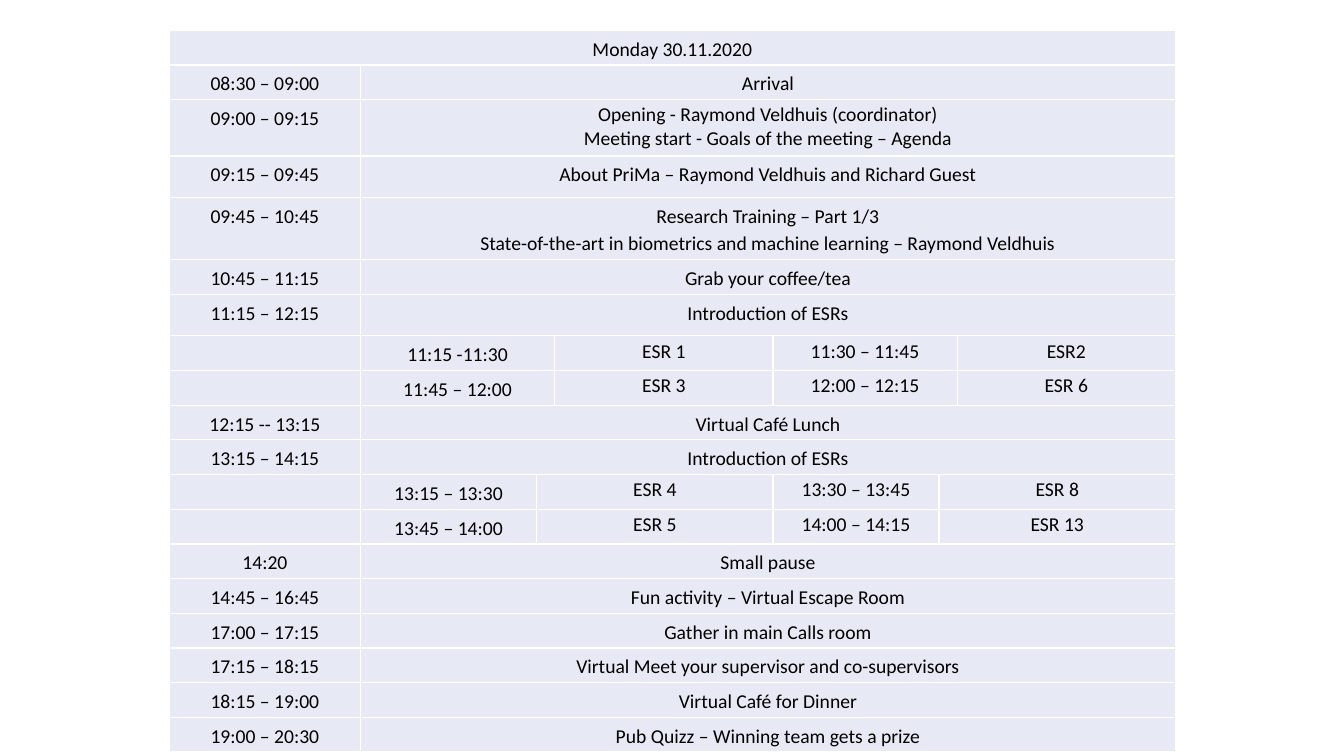
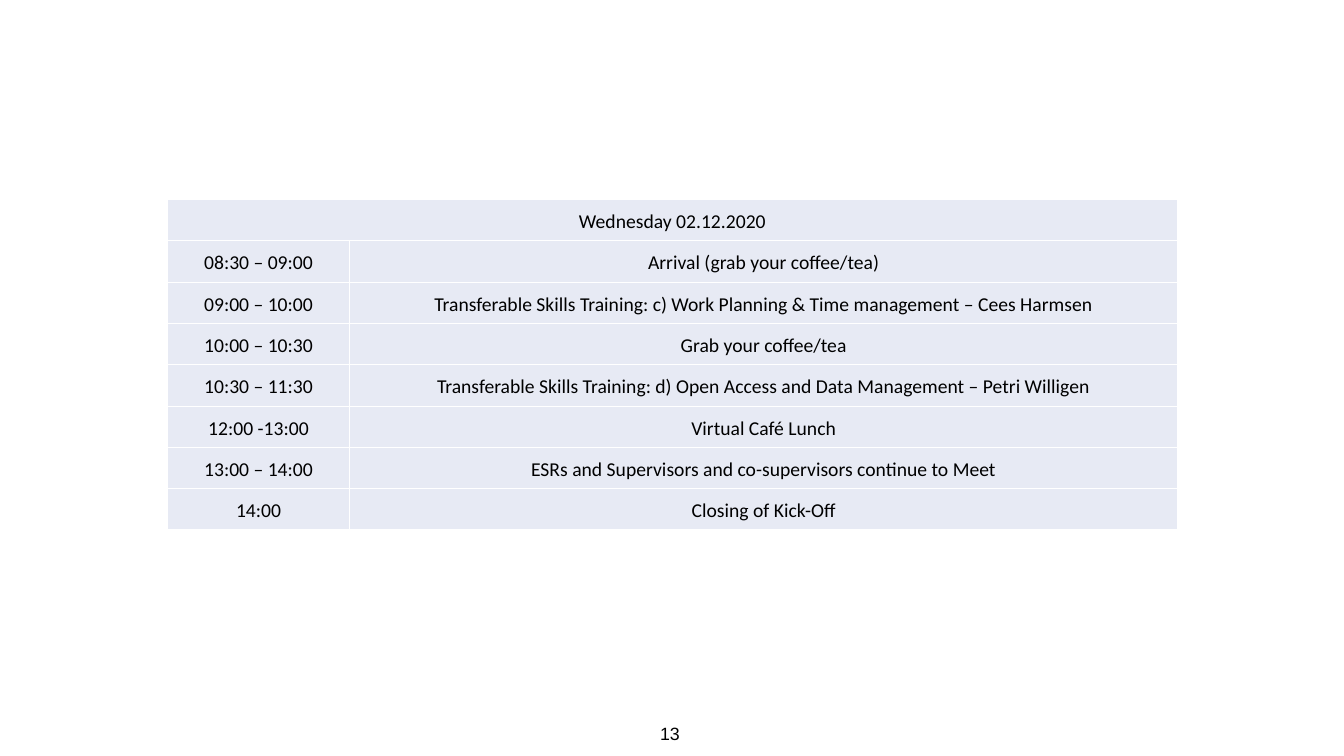
from typing import NamedTuple

from lxml.etree import SubElement
from pptx import Presentation
from pptx.dml.color import RGBColor
from pptx.enum.text import PP_ALIGN
from pptx.oxml.ns import qn
from pptx.util import Inches, Pt

COLORS = {"cell": "E7EAF4", "rule": "FFFFFF", "text": "000000"}
WIDE, HIGH = 13.33, 7.5
EARLY = (0, 1, 3, 4, 6)
LATE = (0, 1, 2, 4, 5)


class Row(NamedTuple):
    """One table row: its texts, height, starting columns and line spacing."""
    texts: tuple
    high: float
    starts: tuple = (0, 1)
    lead: float = 1.15


def style(para, size, face):
    """Centre a paragraph and set its font."""
    para.alignment = PP_ALIGN.CENTER
    para.font.size = Pt(size)
    para.font.name = face
    para.font.color.rgb = RGBColor.from_string(COLORS["text"])


def border(cell):
    """Rule all four sides of a cell."""
    props = cell._tc.get_or_add_tcPr()
    for place, side in enumerate(("lnL", "lnR", "lnT", "lnB")):
        line = SubElement(props, qn(f"a:{side}"), w=str(Pt(1)))
        fill = SubElement(line, qn("a:solidFill"))
        SubElement(fill, qn("a:srgbClr"), val=COLORS["rule"])
        props.insert(place, line)


def fill_cell(cell, text, inset, lead, flush):
    """Write centred text in a cell, flush with its top if asked."""
    cell.margin_left = cell.margin_right = Pt(inset)
    cell.margin_top = cell.margin_bottom = 0 if flush else Pt(inset)
    lines = text.split("\n")
    cell.text = text
    for para in cell.text_frame.paragraphs:
        para.line_spacing = lead if len(lines) > 1 else 1.15
        para.space_after = Pt(0 if len(lines) > 1 else 10)
        style(para, 14, "Calibri")


def agenda(slide, box, cols, rows, inset):
    """Place a day's timetable in a box, with columns as shares of its width."""
    left, top, width = box
    high = sum(row.high for row in rows)
    frame = slide.shapes.add_table(
        len(rows), len(cols), Inches(left), Inches(top), Inches(width), Inches(high))
    table = frame.table
    table.first_row = table.horz_banding = False
    for col, share in zip(table.columns, cols):
        col.width = Inches(width * share / sum(cols))
    for i, row in enumerate(rows):
        table.rows[i].height = Inches(row.high)
        for j in range(len(cols)):
            cell = table.cell(i, j)
            cell.fill.solid()
            cell.fill.fore_color.rgb = RGBColor.from_string(COLORS["cell"])
            border(cell)
        ends = row.starts[1:] + (len(cols),)
        for k, (start, end, text) in enumerate(zip(row.starts, ends, row.texts)):
            cell = table.cell(i, start)
            if end - start > 1:
                cell.merge(table.cell(i, end - 1))
            fill_cell(cell, text, inset, row.lead, k > 1)


def footer(slide, number):
    """Place the slide number at the foot, centred."""
    width = 0.35
    box = slide.shapes.add_textbox(
        Inches((WIDE - width) / 2 - 0.02), Inches(7.11), Inches(width), Inches(0.33))
    frame = box.text_frame
    frame.word_wrap = False
    frame.margin_left = frame.margin_right = Inches(0.06)
    frame.margin_top = frame.margin_bottom = Inches(0.06)
    frame.text = number
    style(frame.paragraphs[0], 12.7, "Arial")


def monday(slide):
    """Build the first day."""
    low, mid = 0.34, 0.41
    rows = [
        Row(("Monday 30.11.2020",), low, (0,)),
        Row(("08:30 – 09:00", "Arrival"), low),
        Row(("09:00 – 09:15", "Opening - Raymond Veldhuis (coordinator)\n"
             "Meeting start - Goals of the meeting – Agenda"), 0.56, lead=1.0),
        Row(("09:15 – 09:45", "About PriMa – Raymond Veldhuis and Richard Guest"), mid),
        Row(("09:45 – 10:45", "Research Training – Part 1/3\nState-of-the-art in "
             "biometrics and machine learning – Raymond Veldhuis"), 0.62),
        Row(("10:45 – 11:15", "Grab your coffee/tea"), low),
        Row(("11:15 – 12:15", "Introduction of ESRs"), mid),
        Row(("", "11:15 -11:30", "ESR 1", "11:30 – 11:45", "ESR2"), low, EARLY),
        Row(("", "11:45 – 12:00", "ESR 3", "12:00 – 12:15", "ESR 6"), low, EARLY),
        Row(("12:15 -- 13:15", "Virtual Café Lunch"), low),
        Row(("13:15 – 14:15", "Introduction of ESRs"), low),
        Row(("", "13:15 – 13:30", "ESR 4", "13:30 – 13:45", "ESR 8"), low, LATE),
        Row(("", "13:45 – 14:00", "ESR 5", "14:00 – 14:15", "ESR 13"), low, LATE),
        Row(("14:20", "Small pause"), low),
        Row(("14:45 – 16:45", "Fun activity – Virtual Escape Room"), low),
        Row(("17:00 – 17:15", "Gather in main Calls room"), low),
        Row(("17:15 – 18:15", "Virtual Meet your supervisor and co-supervisors"), low),
        Row(("18:15 – 19:00", "Virtual Café for Dinner"), low),
        Row(("19:00 – 20:30", "Pub Quizz – Winning team gets a prize"), low),
    ]
    cols = (1.9, 1.75, 0.18, 2.17, 1.65, 0.18, 2.17)
    agenda(slide, (1.68, 0.3, 9.98), cols, rows, 2.6)


def closing(slide):
    """Build the last day."""
    high = 0.41
    plan = [
        ("08:30 – 09:00", "Arrival (grab your coffee/tea)"),
        ("09:00 – 10:00", "Transferable Skills Training: c) Work Planning & "
         "Time management – Cees Harmsen"),
        ("10:00 – 10:30", "Grab your coffee/tea"),
        ("10:30 – 11:30", "Transferable Skills Training: d) Open Access and "
         "Data Management – Petri Willigen"),
        ("12:00 -13:00", "Virtual Café Lunch"),
        ("13:00 – 14:00", "ESRs and Supervisors and co-supervisors continue to Meet"),
        ("14:00", "Closing of Kick-Off"),
    ]
    rows = [Row(("Wednesday 02.12.2020",), high, (0,))]
    rows += [Row(texts, high) for texts in plan]
    agenda(slide, (1.66, 1.98, 10.02), (1.81, 8.21), rows, 4.9)
    footer(slide, "13")


def main():
    """Build and save the deck."""
    deck = Presentation()
    deck.slide_width, deck.slide_height = Inches(WIDE), Inches(HIGH)
    for build in (monday, closing):
        build(deck.slides.add_slide(deck.slide_layouts[6]))
    deck.save("out.pptx")


if __name__ == "__main__":
    main()
